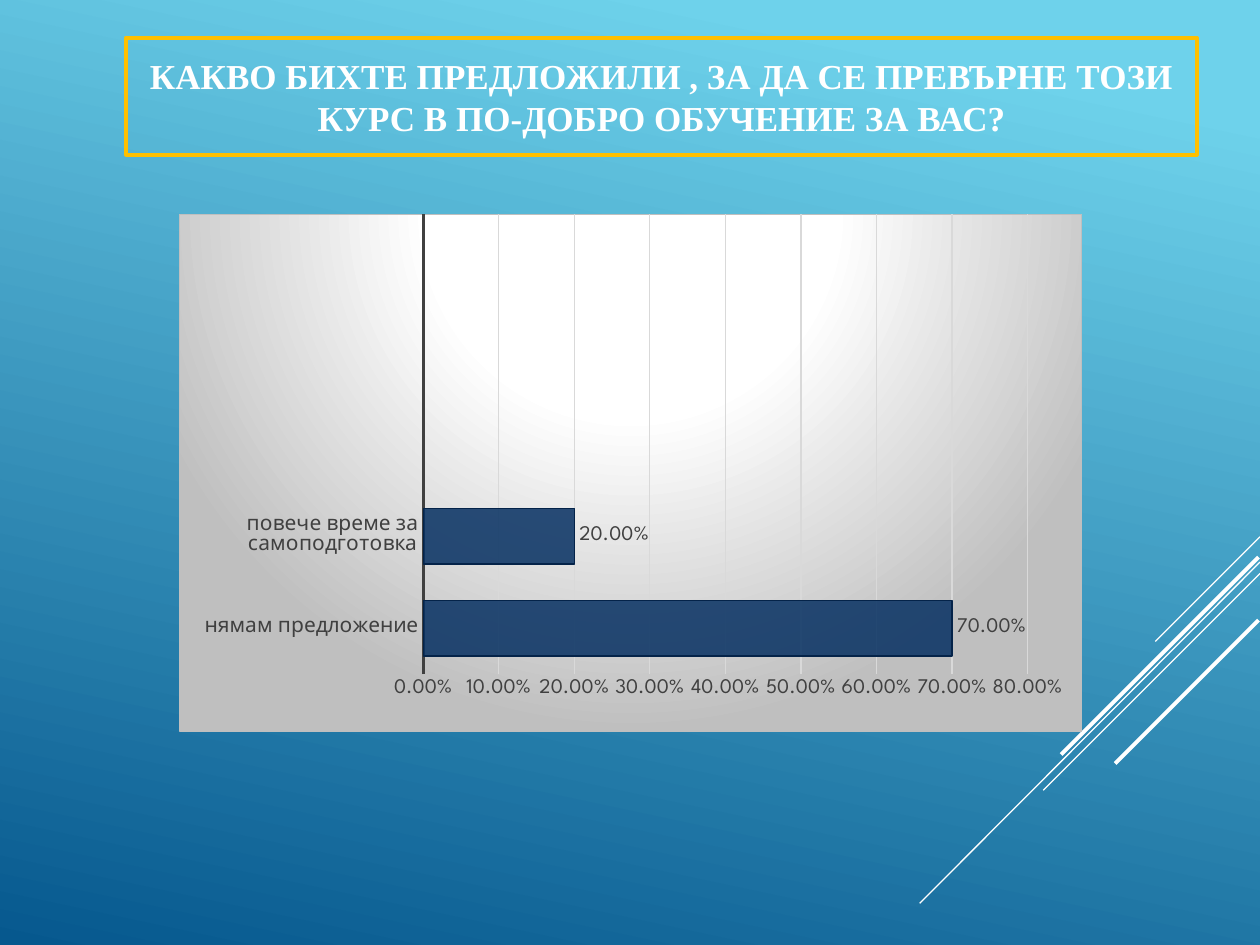
from dataclasses import dataclass

from lxml import etree
from pptx import Presentation, util as u
from pptx.chart.data import CategoryChartData
from pptx.dml.color import RGBColor
from pptx.enum import chart as charts, shapes, text
from pptx.oxml import parse_xml
from pptx.oxml.ns import nsdecls, qn

COLORS = {
    "sky": "6ED2EB", "deep": "06588E", "white": "FFFFFF", "gold": "FFC000",
    "ink": "404040", "grid": "D9D9D9", "silver": "BFBFBF",
    "bar": "052F61", "bar_edge": "042349",
}
TITLE_FONT, CHART_FONT = "Times New Roman", "League Spartan"
PERCENT = "0.00%"


@dataclass
class Stripe:
    """Diagonal decoration line; lengths in cm, weight in points."""
    x1: float
    y1: float
    x2: float
    y2: float
    weight: float


STRIPES = [
    Stripe(25.4, 10.82, 23.29, 12.93, 0.75),
    Stripe(25.4, 11.33, 18.54, 18.21, 0.75),
    Stripe(25.4, 11.56, 21.03, 15.93, 0.75),
    Stripe(25.37, 11.23, 21.39, 15.21, 2.25),
    Stripe(25.37, 12.5, 22.48, 15.39, 2.25),
]


def rgb(name: str) -> RGBColor:
    return RGBColor.from_string(COLORS[name])


def set_line(line, color: str, weight: float) -> None:
    line.color.rgb = rgb(color)
    line.width = u.Pt(weight)


def set_font(font, *, size: float, color: str, name: str, bold: bool = False) -> None:
    font.size, font.name, font.bold = u.Pt(size), name, bold
    font.color.rgb = rgb(color)


def add_text(box, words: str, *, align=text.PP_ALIGN.CENTER, before: float = 0, **style) -> None:
    frame = box.text_frame
    frame.word_wrap = True
    frame.vertical_anchor = text.MSO_ANCHOR.MIDDLE
    para = frame.paragraphs[0]
    para.alignment, para.space_before = align, u.Pt(before)
    span = para.add_run()
    span.text = words
    set_font(span.font, **style)


def add_stripe(page, stripe: Stripe) -> None:
    ends = map(u.Cm, (stripe.x1, stripe.y1, stripe.x2, stripe.y2))
    line = page.shapes.add_connector(shapes.MSO_CONNECTOR.STRAIGHT, *ends)
    set_line(line.line, "white", stripe.weight)
    etree.SubElement(line._element.spPr, qn("a:effectLst"))


def paint_background(page) -> None:
    fill = page.background.fill
    fill.gradient()
    fill.gradient_angle = 360 - 102
    for stop, color, position in zip(fill.gradient_stops, ("sky", "deep"), (0.1, 1)):
        stop.color.rgb, stop.position = rgb(color), position


def style_chart_area(chart) -> None:
    """Radial grey fill, border and fixed inner plot area."""
    stops = "".join(
        f'<a:gs pos="{position}000"><a:srgbClr val="{COLORS[color]}"/></a:gs>'
        for position, color in ((0, "white"), (39, "white"), (100, "silver")))
    area = parse_xml(
        f'<c:spPr {nsdecls("c", "a")}><a:gradFill><a:gsLst>{stops}</a:gsLst>'
        '<a:path path="circle"><a:fillToRect l="50000" t="-80000" r="50000" b="180000"/></a:path>'
        f'</a:gradFill><a:ln w="{u.Pt(0.75)}"><a:solidFill>'
        f'<a:srgbClr val="{COLORS["silver"]}"/></a:solidFill></a:ln></c:spPr>')
    root = chart._chartSpace.find(qn("c:chart"))
    root.addnext(area)

    plot_area = root.find(qn("c:plotArea"))
    for old in plot_area.findall(qn("c:layout")):
        plot_area.remove(old)
    places = (("x", 0.27), ("y", 0), ("w", 0.67), ("h", 0.89))
    settings = [("layoutTarget", "inner"), ("xMode", "edge"), ("yMode", "edge"), *places]
    parts = "".join(f'<c:{tag} val="{value}"/>' for tag, value in settings)
    plot_area.insert(0, parse_xml(
        f'<c:layout {nsdecls("c")}><c:manualLayout>{parts}</c:manualLayout></c:layout>'))


def add_bar_chart(page) -> None:
    data = CategoryChartData(number_format=PERCENT)
    data.categories = ["нямам предложение", "повече време за самоподготовка", "", "", ""]
    data.add_series("Series 1", (0.7, 0.2, None, None, None))
    place = map(u.Cm, (3.61, 4.29, 18.21, 10.46))
    chart = page.shapes.add_chart(charts.XL_CHART_TYPE.BAR_CLUSTERED, *place, data).chart
    chart.has_title = chart.has_legend = False
    set_font(chart.font, size=10, color="white", name=CHART_FONT)
    style_chart_area(chart)
    label_style = dict(size=12, color="ink", name=CHART_FONT)

    # Axes
    for axis in (chart.category_axis, chart.value_axis):
        axis.major_tick_mark = axis.minor_tick_mark = charts.XL_TICK_MARK.NONE
        set_font(axis.tick_labels.font, **label_style)
    chart.category_axis.has_major_gridlines = False
    set_line(chart.category_axis.format.line, "ink", 1.5)
    values = chart.value_axis
    values.minimum_scale, values.maximum_scale, values.major_unit = 0, 0.8, 0.1
    values.format.line.fill.background()
    values.has_major_gridlines = True
    set_line(values.major_gridlines.format.line, "grid", 0.75)
    values.tick_labels.number_format = PERCENT
    values.tick_labels.number_format_is_linked = False

    # Bars and their labels
    plot = chart.plots[0]
    plot.gap_width, plot.vary_by_categories = 65, False
    series = plot.series[0]
    series.format.fill.solid()
    series.format.fill.fore_color.rgb = rgb("bar")
    tint = series._element.spPr.find(".//" + qn("a:srgbClr"))
    etree.SubElement(tint, qn("a:alpha"), val="85000")
    set_line(series.format.line, "bar_edge", 0.75)
    labels = series.data_labels
    labels.show_value = True
    labels.number_format, labels.number_format_is_linked = PERCENT, False
    labels.position = charts.XL_LABEL_POSITION.OUTSIDE_END
    set_font(labels.font, **label_style)


def add_title(page) -> None:
    place = map(u.Cm, (2.54, 0.76, 21.59, 2.36))
    box = page.shapes.add_shape(shapes.MSO_SHAPE.RECTANGLE, *place)
    box.shadow.inherit = False
    box.fill.background()
    set_line(box.line, "gold", 2.25)
    add_text(box, "КАКВО БИХТЕ ПРЕДЛОЖИЛИ , ЗА ДА СЕ ПРЕВЪРНЕ ТОЗИ КУРС В ПО-ДОБРО ОБУЧЕНИЕ ЗА ВАС?",
             before=5.8, size=20, color="white", name=TITLE_FONT, bold=True)


def main() -> None:
    deck = Presentation()
    deck.slide_width, deck.slide_height = u.Cm(25.4), u.Cm(19.05)
    page = deck.slides.add_slide(deck.slide_layouts[6])
    paint_background(page)
    for stripe in STRIPES:
        add_stripe(page, stripe)
    add_title(page)
    add_bar_chart(page)
    deck.save("out.pptx")


if __name__ == "__main__":
    main()
